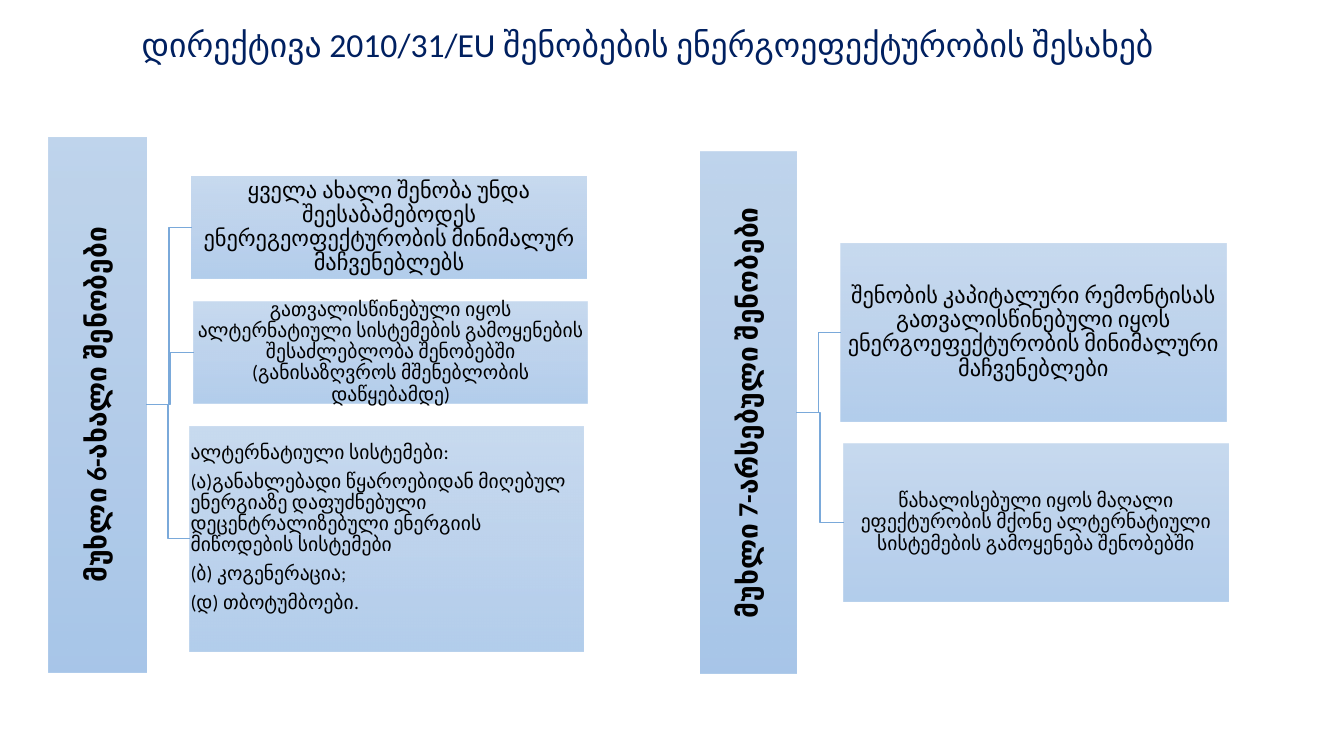
from dataclasses import dataclass

from pptx import Presentation
from pptx.dml.color import RGBColor
from pptx.enum.shapes import MSO_CONNECTOR, MSO_SHAPE
from pptx.enum.text import MSO_ANCHOR, PP_ALIGN
from pptx.oxml import parse_xml
from pptx.oxml.ns import nsdecls, qn
from pptx.util import Pt

SCALE = 9144  # EMU in one px, at 100 px to the inch


@dataclass(frozen=True)
class Theme:
    font: str = "Calibri"
    navy: str = "002060"
    black: str = "000000"
    line: str = "7AA9DA"
    stops: tuple = ((0, "B1CBE9"), (50, "A3C1E5"), (100, "93B9E4"))
    title: int = 24
    spine: int = 20
    large: int = 16
    small: int = 14


def px(value):
    return value * SCALE


def write(shape, text, size, color, font, bold=False, align=PP_ALIGN.CENTER,
          anchor=MSO_ANCHOR.MIDDLE, inset=(1, 1, 1, 1), gap=0):
    """Fill a shape with one paragraph per line; inset is left, top, right, bottom."""
    frame = shape.text_frame
    frame.word_wrap = True
    frame.vertical_anchor = anchor
    (frame.margin_left, frame.margin_top,
     frame.margin_right, frame.margin_bottom) = map(px, inset)
    for i, line in enumerate(text.split("\n")):
        par = frame.add_paragraph() if i else frame.paragraphs[0]
        par.alignment = align
        par.line_spacing = 0.9
        if i:
            par.space_before = Pt(gap)
        run = par.add_run()
        run.text = line
        run.font.name = font
        run.font.size = Pt(size)
        run.font.bold = bold
        run.font.color.rgb = RGBColor.from_string(color)


class Board:
    def __init__(self, slide, theme):
        self.items = slide.shapes
        self.theme = theme

    def title(self, text, area):
        box = self.items.add_textbox(*map(px, area))
        write(box, text, self.theme.title, self.theme.navy, self.theme.font,
              anchor=MSO_ANCHOR.TOP, inset=(10, 8, 10, 5))

    def panel(self, text, area, size, alpha=70, **form):
        box = self.items.add_shape(MSO_SHAPE.RECTANGLE, *map(px, area))
        box.shadow.inherit = False
        box.line.fill.background()
        self.shade(box, alpha)
        write(box, text, size, self.theme.black, self.theme.font, **form)
        return box

    def shade(self, box, alpha):
        """Give the box a see-through gradient from top to bottom."""
        stops = "".join(
            f'<a:gs pos="{pos * 1000}"><a:srgbClr val="{color}">'
            f'<a:alpha val="{alpha * 1000}"/></a:srgbClr></a:gs>'
            for pos, color in self.theme.stops)
        box.fill.background()
        props = box._element.spPr
        props.replace(props.find(qn("a:noFill")), parse_xml(
            f'<a:gradFill {nsdecls("a")} rotWithShape="1"><a:gsLst>{stops}</a:gsLst>'
            '<a:lin ang="5400000" scaled="0"/></a:gradFill>'))

    def spine(self, text, area):
        box = self.panel(text, area, self.theme.spine, alpha=80, bold=True)
        box.text_frame._txBody.bodyPr.set("vert", "vert270")
        return box

    def link(self, start, end):
        line = self.items.add_connector(MSO_CONNECTOR.ELBOW, 0, 0, 0, 0)
        line.begin_connect(start, 3)
        line.end_connect(end, 1)
        line.line.color.rgb = RGBColor.from_string(self.theme.line)
        line.line.width = Pt(1)
        line._element.spPr.append(parse_xml(f'<a:effectLst {nsdecls("a")}/>'))

    def tree(self, head, area, leaves):
        root = self.spine(head, area)
        for text, place, size, form in leaves:
            self.link(root, self.panel(text, place, size, **form))


def main():
    deck = Presentation()
    deck.slide_width, deck.slide_height = px(1333), px(750)
    theme = Theme()
    board = Board(deck.slides.add_slide(deck.slide_layouts[6]), theme)

    board.title("დირექტივა 2010/31/EU შენობების ენერგოეფექტურობის შესახებ",
                (68, 20, 1149, 92))
    board.tree("მუხლი 6-ახალი შენობები", (48, 136, 97, 531), [
        ("ყველა ახალი შენობა უნდა შეესაბამებოდეს ენერეგეოფექტურობის "
         "მინიმალურ მაჩვენებლებს",
         (190, 175, 392, 101), theme.large, {}),
        ("გათვალისწინებული იყოს ალტერნატიული სისტემების გამოყენების "
         "შესაძლებლობა შენობებში (განისაზღვროს მშენებლობის დაწყებამდე)",
         (192, 299, 391, 101), theme.small, {}),
        ("ალტერნატიული სისტემები:\n"
         "(ა)განახლებადი წყაროებიდან მიღებულ ენერგიაზე დაფუძნებული "
         "დეცენტრალიზებული ენერგიის მიწოდების სისტემები\n"
         "(ბ) კოგენერაცია;\n"
         "(დ) თბოტუმბოები.",
         (188, 423, 391, 223), theme.small,
         {"align": PP_ALIGN.LEFT, "inset": (1, 1, 1, 22), "gap": 5.6}),
    ])
    board.tree("მუხლი 7-არსებული შენობები", (695, 151, 95, 517), [
        ("შენობის კაპიტალური რემონტისას გათვალისწინებული იყოს "
         "ენერგოეფექტურობის მინიმალური მაჩვენებლები",
         (834, 242, 382, 176), theme.large, {}),
        ("წახალისებული იყოს მაღალი ეფექტურობის მქონე ალტერნატიული "
         "სისტემების გამოყენება შენობებში",
         (837, 440, 381, 157), theme.small, {}),
    ])
    deck.save("out.pptx")


if __name__ == "__main__":
    main()
